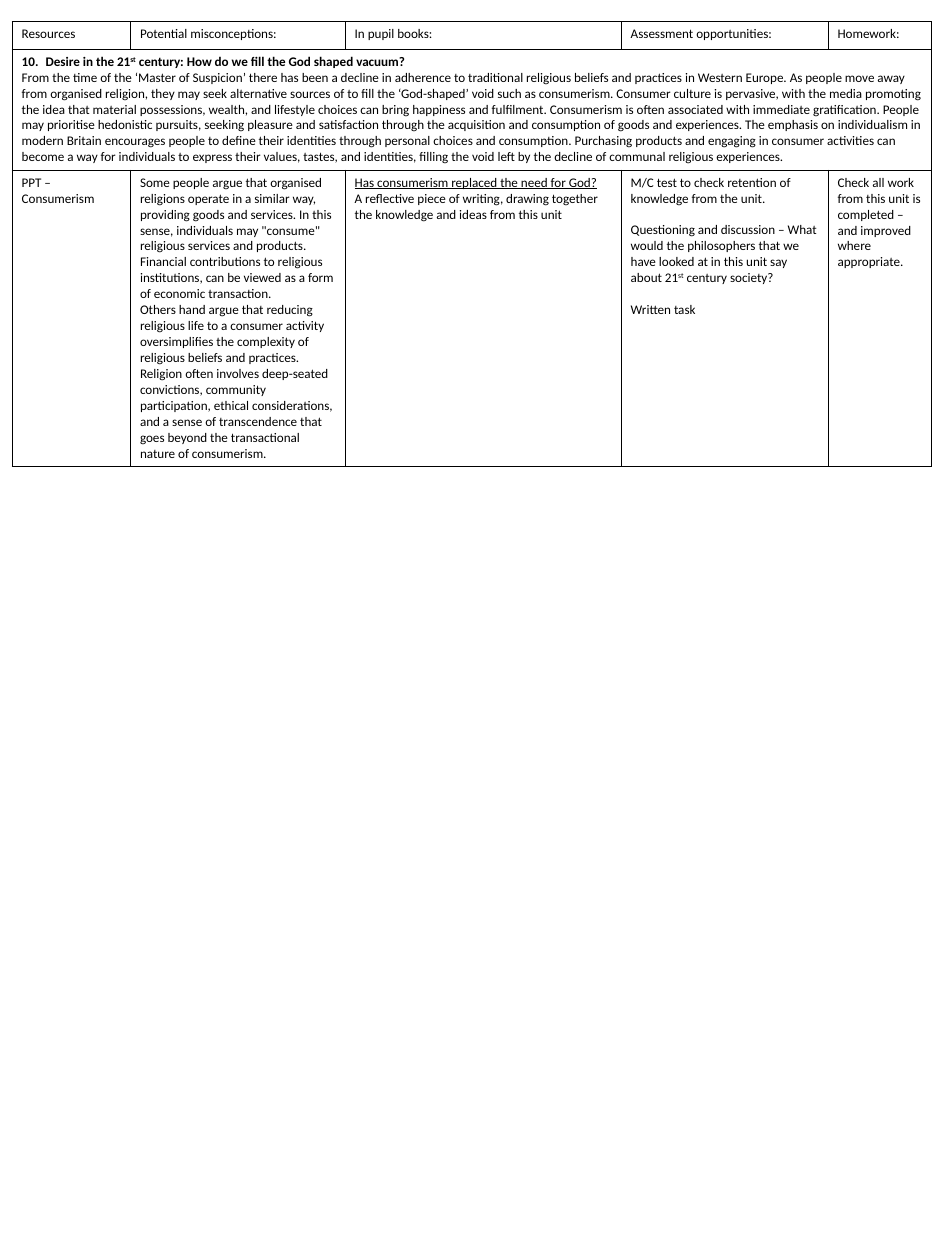
from lxml import etree
from pptx import Presentation
from pptx import util as u
from pptx.dml.color import RGBColor
from pptx.oxml import ns

BLACK = RGBColor(0, 0, 0)
COLUMN_WIDTHS = [3.18, 5.77, 7.42, 5.56, 2.79]
ROW_HEIGHTS = [0.74, 3.25, 7.95]

HEADINGS = ["Resources", "Potential misconceptions:", "In pupil books:",
            "Assessment opportunities:", "Homework:"]
# "^" encloses raised text
LESSON_TITLE = "Desire in the 21^st^ century: How do we fill the God shaped vacuum?"
LESSON_SENTENCES = [
    "From the time of the ‘Master of Suspicion’ there has been a decline in adherence to "
    "traditional religious beliefs and practices in Western Europe.",
    "As people move away from organised religion, they may seek alternative sources of to "
    "fill the ‘God-shaped’ void such as consumerism.",
    "Consumer culture is pervasive, with the media promoting the idea that material "
    "possessions, wealth, and lifestyle choices can bring happiness and fulfilment.",
    "Consumerism is often associated with immediate gratification.",
    "People may prioritise hedonistic pursuits, seeking pleasure and satisfaction through "
    "the acquisition and consumption of goods and experiences.",
    "The emphasis on individualism in modern Britain encourages people to define their "
    "identities through personal choices and consumption.",
    "Purchasing products and engaging in consumer activities can become a way for "
    "individuals to express their values, tastes, and identities, filling the void left by "
    "the decline of communal religious experiences.",
]
DETAILS = [
    ["PPT – Consumerism"],
    ["Some people argue that organised religions operate in a similar way, providing goods and "
     "services. In this sense, individuals may \"consume\" religious services and products. "
     "Financial contributions to religious institutions, can be viewed as a form of economic "
     "transaction.",
     "Others hand argue that reducing religious life to a consumer activity oversimplifies the "
     "complexity of religious beliefs and practices. Religion often involves deep-seated "
     "convictions, community participation, ethical considerations, and a sense of "
     "transcendence that goes beyond the transactional nature of consumerism."],
    ["Has consumerism replaced the need for God?",
     "A reflective piece of writing, drawing together the knowledge and ideas from this unit"],
    ["M/C test to check retention of knowledge from the unit.",
     "Questioning and discussion – What would the philosophers that we have looked at in this "
     "unit say about 21^st^ century society?",
     "Written task"],
    ["Check all work from this unit is completed – and improved where appropriate."],
]


def write_cell(cell, lines):
    frame = cell.text_frame
    for number, line in enumerate(lines):
        para = frame.add_paragraph() if number else frame.paragraphs[0]
        para.font.name = "Calibri"
        para.font.size = u.Pt(10)
        para.font.color.rgb = BLACK
        for part, words in enumerate(line.split("^")):
            span = para.add_run()
            span.text = words
            if part % 2:
                span._r.get_or_add_rPr().set("baseline", "30000")


def style_cell(cell):
    cell.fill.background()
    properties = cell._tc.get_or_add_tcPr()
    for place, side in enumerate(["lnL", "lnR", "lnT", "lnB"]):
        line = etree.Element(ns.qn(f"a:{side}"), w=str(u.Pt(1)))
        fill = etree.SubElement(line, ns.qn("a:solidFill"))
        etree.SubElement(fill, ns.qn("a:srgbClr"), val=str(BLACK))
        properties.insert(place, line)


# Page
deck = Presentation()
deck.slide_width, deck.slide_height = u.Cm(25.4), u.Cm(33.86)
page = deck.slides.add_slide(deck.slide_layouts[6])

# Table grid
table = page.shapes.add_table(
    len(ROW_HEIGHTS), len(COLUMN_WIDTHS), u.Cm(0.33), u.Cm(0.58),
    u.Cm(sum(COLUMN_WIDTHS)), u.Cm(sum(ROW_HEIGHTS))).table
table.first_row = table.horz_banding = False
for column, width in zip(table.columns, COLUMN_WIDTHS):
    column.width = u.Cm(width)
for row, height in zip(table.rows, ROW_HEIGHTS):
    row.height = u.Cm(height)
for cell in table.iter_cells():
    style_cell(cell)

# Headings and lesson details
for index, (heading, lines) in enumerate(zip(HEADINGS, DETAILS)):
    write_cell(table.cell(0, index), [heading])
    write_cell(table.cell(2, index), lines)
table.cell(2, 2).text_frame.paragraphs[0].font.underline = True
for para in table.cell(2, 3).text_frame.paragraphs[1:]:
    para.space_before = u.Pt(12)

# Lesson summary across the full width, with a numbered title
summary = table.cell(1, 0)
summary.merge(table.cell(1, 4))
write_cell(summary, [LESSON_TITLE, " ".join(LESSON_SENTENCES)])
title = summary.text_frame.paragraphs[0]
title.font.bold = True
numbering = title._p.get_or_add_pPr()
numbering.set("marL", str(u.Cm(0.64)))
numbering.set("indent", str(u.Cm(-0.64)))
number = etree.Element(ns.qn("a:buAutoNum"), type="arabicPeriod", startAt="10")
numbering.insert(0, number)

deck.save("out.pptx")
